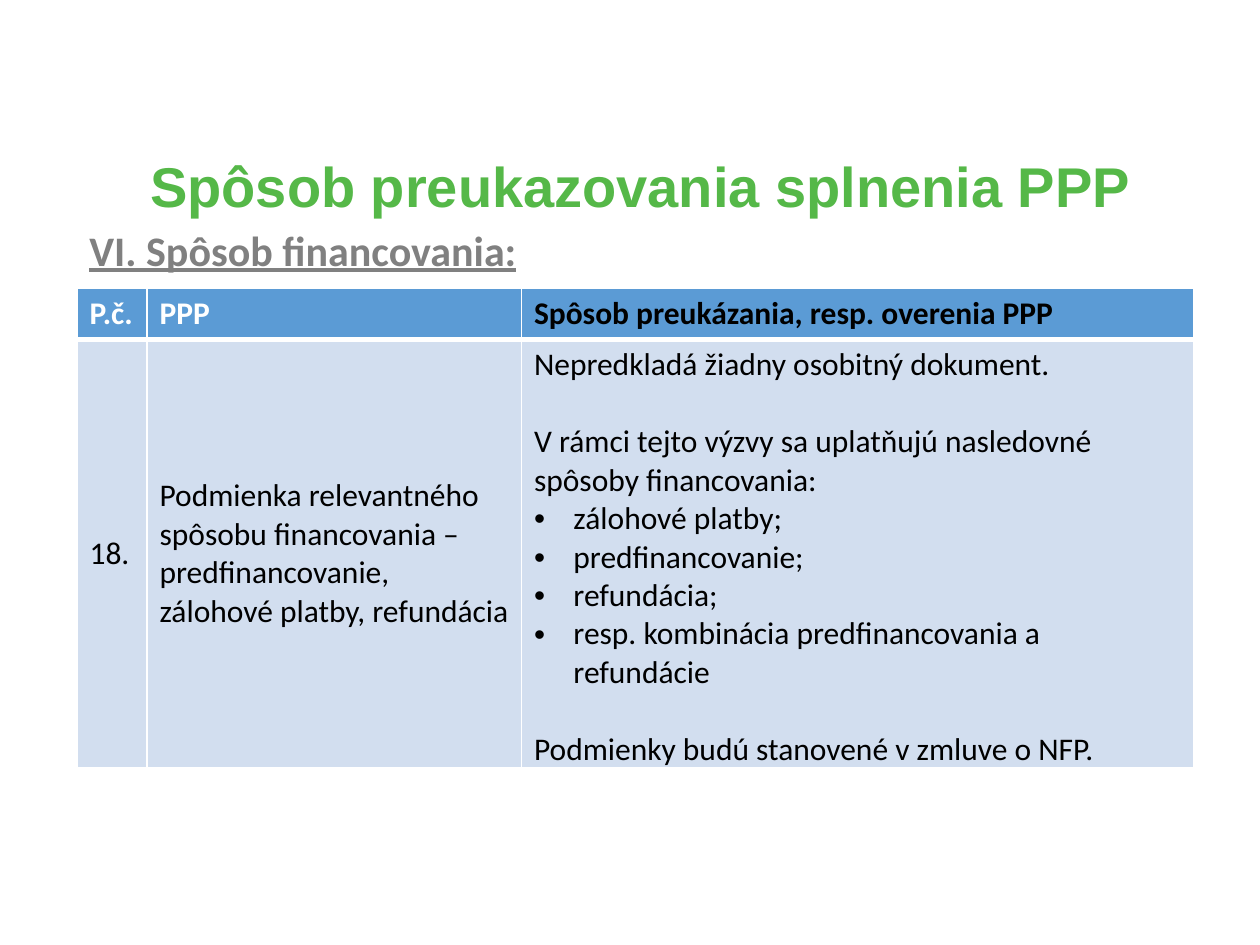
"""Build a slide with a table of financing conditions and how they are proven."""
from dataclasses import dataclass

import pptx
import pptx.dml.color
import pptx.enum.text
import pptx.oxml.ns
import pptx.oxml.xmlchemy
import pptx.util
from lxml import etree

Pt = pptx.util.Pt
RGBColor = pptx.dml.color.RGBColor
ALIGN = pptx.enum.text.PP_ALIGN
ANCHOR = pptx.enum.text.MSO_ANCHOR
qn = pptx.oxml.ns.qn

GREEN = RGBColor(0x55, 0xB8, 0x48)
GRAY = RGBColor(0x80, 0x80, 0x80)
WHITE = RGBColor(0xFF, 0xFF, 0xFF)
BLACK = RGBColor(0, 0, 0)
HEADER_FILL = RGBColor(0x5B, 0x9B, 0xD5)
BODY_FILL = RGBColor(0xD2, 0xDE, 0xEF)

LEFT = 44
LINE_HEIGHT = 22
BULLET_INDENT = 22.5
COLUMN_WIDTHS = (40, 214, 384)
ROW_HEIGHTS = (29.5, 245)


@dataclass(frozen=True)
class Style:
    font: str
    size: float
    color: RGBColor
    bold: bool = False
    underline: bool = False


@dataclass(frozen=True)
class Para:
    text: str
    bullet: bool = False
    gap: bool = False


@dataclass(frozen=True)
class Cell:
    paras: tuple[Para, ...]
    style: Style
    bottom: float = 3.6


TITLE = Style("Arial", 32, GREEN, bold=True)
SUBTITLE = Style("Calibri", 24, GRAY, bold=True, underline=True)
HEAD = Style("Calibri", 18, WHITE, bold=True)
HEAD_DARK = Style("Calibri", 18, BLACK, bold=True)
BODY = Style("Calibri", 18, BLACK)

ROWS = (
    (
        Cell((Para("P.č."),), HEAD),
        Cell((Para("PPP"),), HEAD),
        Cell((Para("Spôsob preukázania, resp. overenia PPP"),), HEAD_DARK),
    ),
    (
        Cell((Para("18."),), BODY),
        Cell((Para("Podmienka relevantného spôsobu financovania – "
                   "predfinancovanie, zálohové platby, refundácia"),), BODY),
        Cell((
            Para("Nepredkladá žiadny osobitný dokument."),
            Para("V rámci tejto výzvy sa uplatňujú nasledovné spôsoby financovania:", gap=True),
            Para("zálohové platby;", bullet=True),
            Para("predfinancovanie;", bullet=True),
            Para("refundácia;", bullet=True),
            Para("resp. kombinácia predfinancovania a refundácie", bullet=True),
            Para("Podmienky budú stanovené v zmluve o NFP.", gap=True),
        ), BODY, bottom=0),
    ),
)


def format_runs(p, style: Style) -> None:
    """Apply a style to every run of a paragraph."""
    for r in p.runs:
        r.font.name = style.font
        r.font.size = Pt(style.size)
        r.font.bold = style.bold
        r.font.underline = style.underline
        r.font.color.rgb = style.color


def add_bullet(p) -> None:
    """Give a paragraph a hanging round bullet."""
    pPr = p._p.get_or_add_pPr()
    pPr.set("marL", str(Pt(BULLET_INDENT)))
    pPr.set("indent", str(-Pt(BULLET_INDENT)))
    etree.SubElement(pPr, qn("a:buFont"), typeface="Arial")
    etree.SubElement(pPr, qn("a:buChar"), char="•")


def add_text(slide, text: str, box: tuple[float, ...], style: Style,
             align: ALIGN, wrap: bool):
    """Add a one-paragraph text box and return its text frame."""
    sp = slide.shapes.add_textbox(*(Pt(v) for v in box))
    tf = sp.text_frame
    tf.word_wrap = wrap
    tf.text = text
    p = tf.paragraphs[0]
    p.alignment = align
    format_runs(p, style)
    return tf


def set_borders(cell, top: float, bottom: float) -> None:
    """Draw white cell borders with thin sides."""
    tcPr = cell._tc.get_or_add_tcPr()
    for tag, width in (("lnL", 1), ("lnR", 1), ("lnT", top), ("lnB", bottom)):
        ln = etree.SubElement(tcPr, qn(f"a:{tag}"), w=str(Pt(width)))
        fill = etree.SubElement(ln, qn("a:solidFill"))
        etree.SubElement(fill, qn("a:srgbClr"), val=str(WHITE))


def fill_cell(cell, content: Cell, header: bool) -> None:
    """Write and format one table cell."""
    set_borders(cell, top=1 if header else 3, bottom=3 if header else 1)
    cell.fill.solid()
    cell.fill.fore_color.rgb = HEADER_FILL if header else BODY_FILL
    cell.vertical_anchor = ANCHOR.TOP if header else ANCHOR.MIDDLE
    cell.margin_bottom = Pt(content.bottom)
    tf = cell.text_frame
    for i, para in enumerate(content.paras):
        p = tf.add_paragraph() if i else tf.paragraphs[0]
        p.text = para.text
        if para.bullet:
            add_bullet(p)
        if para.gap:
            p.space_before = Pt(LINE_HEIGHT)
        format_runs(p, content.style)


def add_conditions_table(slide) -> None:
    """Add the table of conditions."""
    table = slide.shapes.add_table(
        len(ROWS), len(COLUMN_WIDTHS), Pt(LEFT), Pt(164.5),
        Pt(sum(COLUMN_WIDTHS)), Pt(sum(ROW_HEIGHTS))).table
    for column, width in zip(table.columns, COLUMN_WIDTHS):
        column.width = Pt(width)
    for i, (row, height) in enumerate(zip(table.rows, ROW_HEIGHTS)):
        row.height = Pt(height)
        for cell, content in zip(row.cells, ROWS[i]):
            fill_cell(cell, content, header=i == 0)


def main() -> None:
    """Build and save the slide."""
    prs = pptx.Presentation()
    prs.slide_width, prs.slide_height = Pt(720), Pt(540)
    slide = prs.slides.add_slide(prs.slide_layouts[6])
    tf = add_text(slide, "Spôsob preukazovania splnenia PPP",
                  (LEFT, 73.5, 644.5, 69), TITLE, ALIGN.CENTER, wrap=True)
    tf.vertical_anchor = ANCHOR.MIDDLE
    tf.paragraphs[0].line_spacing = 0.9
    tf = add_text(slide, "VI. Spôsob financovania:",
                  (LEFT, 124.5, 261.5, 36), SUBTITLE, ALIGN.JUSTIFY, wrap=False)
    tf.auto_size = pptx.enum.text.MSO_AUTO_SIZE.SHAPE_TO_FIT_TEXT
    add_conditions_table(slide)
    prs.save("out.pptx")


if __name__ == "__main__":
    main()
